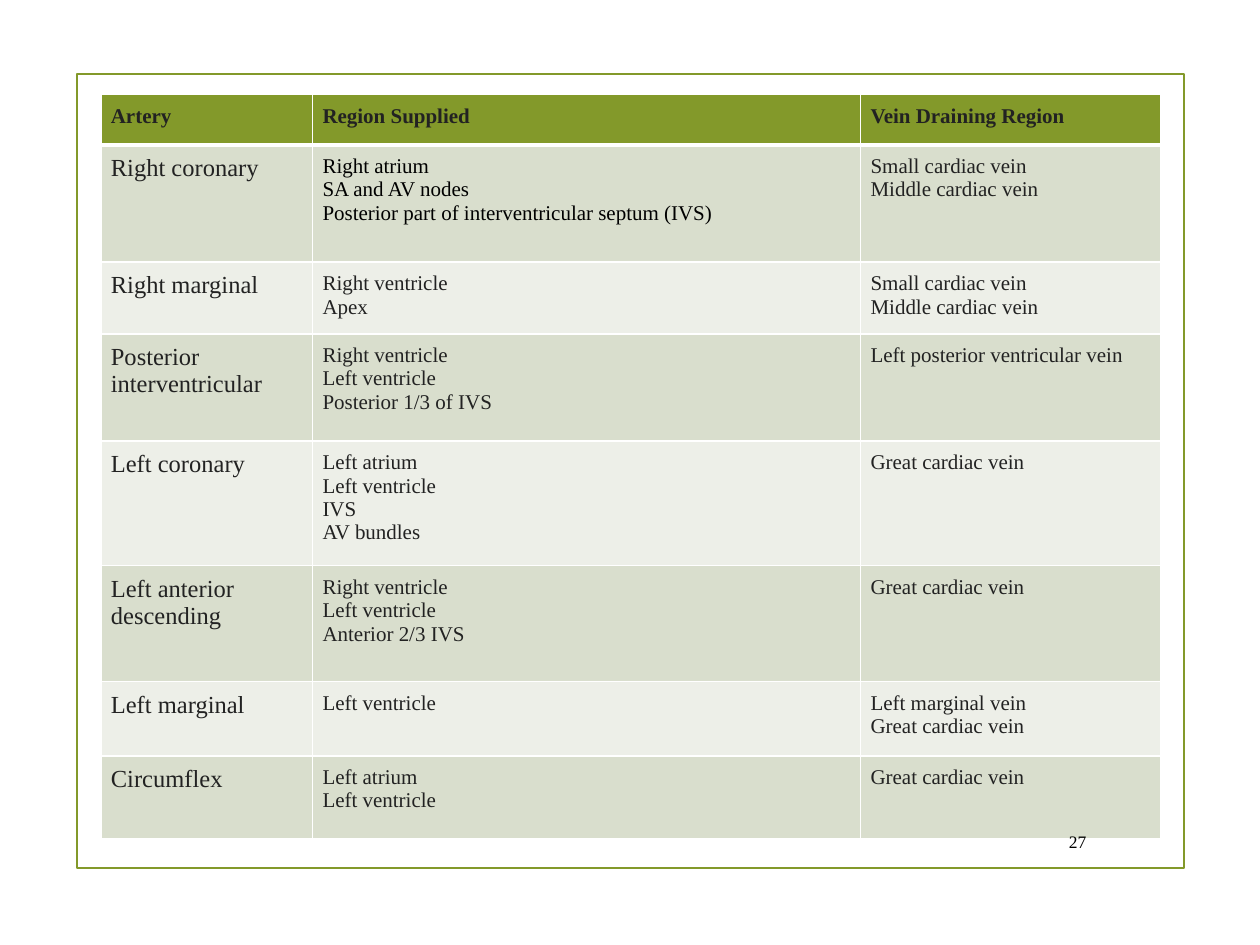
"""Build a slide with a table of coronary arteries, their regions and their veins."""
from lxml.etree import SubElement
from pptx import Presentation
from pptx.dml.color import RGBColor
from pptx.enum.shapes import MSO_SHAPE as Shape
from pptx.enum.text import MSO_ANCHOR as Anchor, PP_ALIGN as Align
from pptx.oxml.ns import qn
from pptx.util import Inches, Pt

COLORS = {
    "green": "83992A",
    "dark band": "D9DECD",
    "light band": "EDEFE8",
    "white": "FFFFFF",
    "text": "222222",
    "black": "000000",
}
FONT = "Times New Roman"
COLUMN_WIDTHS = [1.68, 4.35, 2.38]
ROW_HEIGHTS = [0.4, 0.93, 0.57, 0.85, 0.99, 0.92, 0.59, 0.66]
ROWS = [
    ("Artery", "Region Supplied", "Vein Draining Region"),
    ("Right coronary",
     "Right atrium\nSA and AV nodes\nPosterior part of interventricular septum (IVS)",
     "Small cardiac vein\nMiddle cardiac vein"),
    ("Right marginal", "Right ventricle\nApex", "Small cardiac vein\nMiddle cardiac vein"),
    ("Posterior interventricular", "Right ventricle\nLeft ventricle\nPosterior 1/3 of IVS",
     "Left posterior ventricular vein"),
    ("Left coronary", "Left atrium\nLeft ventricle\nIVS\nAV bundles", "Great cardiac vein"),
    ("Left anterior descending", "Right ventricle\nLeft ventricle\nAnterior 2/3 IVS",
     "Great cardiac vein"),
    ("Left marginal", "Left ventricle", "Left marginal vein\nGreat cardiac vein"),
    ("Circumflex", "Left atrium\nLeft ventricle", "Great cardiac vein"),
]


def format_text(text_frame, size, color, bold=False):
    for paragraph in text_frame.paragraphs:
        for run in paragraph.runs:
            run.font.name = FONT
            run.font.size = Pt(size)
            run.font.bold = bold
            run.font.color.rgb = RGBColor.from_string(COLORS[color])


def add_border(cell, side, width):
    properties = cell._tc.get_or_add_tcPr()
    line = SubElement(properties, qn(f"a:ln{side}"), w=str(Pt(width)))
    fill = SubElement(line, qn("a:solidFill"))
    SubElement(fill, qn("a:srgbClr"), val=COLORS["white"])


presentation = Presentation()
presentation.slide_width = Inches(10)
presentation.slide_height = Inches(7.5)
slide = presentation.slides.add_slide(presentation.slide_layouts[6])

frame = slide.shapes.add_shape(
    Shape.RECTANGLE, Inches(0.61), Inches(0.59), Inches(8.79), Inches(6.3))
frame.shadow.inherit = False
frame.fill.background()
frame.line.color.rgb = RGBColor.from_string(COLORS["green"])
frame.line.width = Pt(1.25)

table = slide.shapes.add_table(
    len(ROWS), len(COLUMN_WIDTHS), Inches(0.8), Inches(0.75),
    Inches(sum(COLUMN_WIDTHS)), Inches(sum(ROW_HEIGHTS))).table
for column, width in zip(table.columns, COLUMN_WIDTHS):
    column.width = Inches(width)
for row, height in zip(table.rows, ROW_HEIGHTS):
    row.height = Inches(height)

for row_index, texts in enumerate(ROWS):
    is_header = row_index == 0
    band = "green" if is_header else "dark band" if row_index % 2 else "light band"
    for column_index, text in enumerate(texts):
        cell = table.cell(row_index, column_index)
        cell.margin_left = cell.margin_right = Inches(0.08)
        cell.margin_top = cell.margin_bottom = Inches(0.08)
        for side in "LRTB":
            under_header = (row_index, side) in [(0, "B"), (1, "T")]
            add_border(cell, side, 3 if under_header else 1)
        cell.fill.solid()
        cell.fill.fore_color.rgb = RGBColor.from_string(COLORS[band])
        cell.text_frame.text = text
        size = 14 if column_index == 0 and not is_header else 12
        color = "black" if (row_index, column_index) == (1, 1) else "text"
        format_text(cell.text_frame, size, color, bold=is_header)

page_number = slide.shapes.add_textbox(
    Inches(8.29), Inches(6.52), Inches(0.43), Inches(0.31)).text_frame
page_number.word_wrap = True
page_number.vertical_anchor = Anchor.MIDDLE
page_number.text = "27"
page_number.paragraphs[0].alignment = Align.RIGHT
format_text(page_number, 10, "black")

presentation.save("out.pptx")
